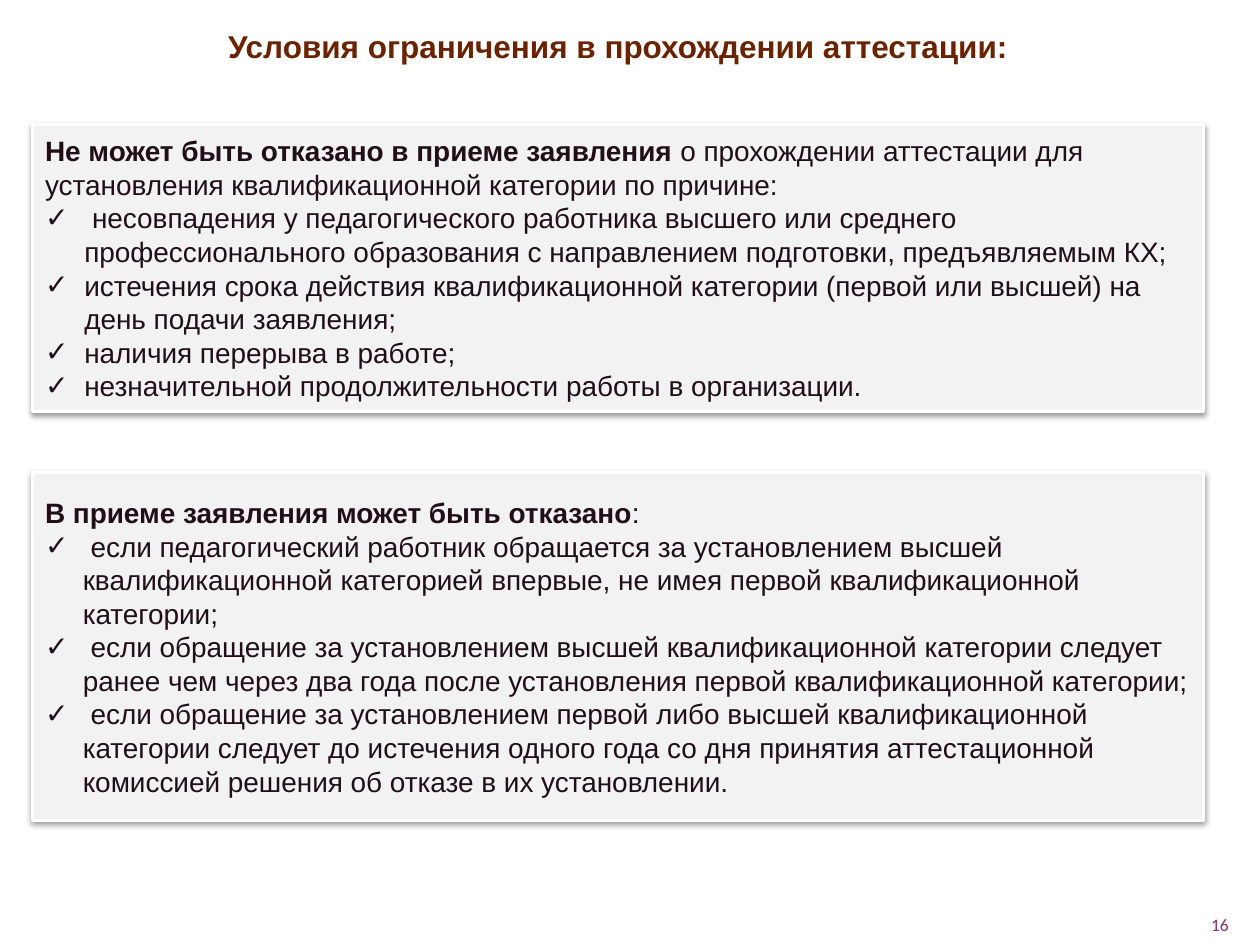
from lxml import etree
from pptx import Presentation
from pptx.dml.color import RGBColor as Rgb
from pptx.enum.shapes import MSO_SHAPE as Shape
from pptx.enum.text import MSO_ANCHOR as Anchor, MSO_AUTO_SIZE as Fit, PP_ALIGN as Align
from pptx.oxml import parse_xml
from pptx.oxml.ns import qn
from pptx.util import Cm, Pt

HUES = {"panel": "F2F2F2", "edge": "FFFFFF", "text": "210F17",
        "title": "6A2300", "number": "832F72"}
LEFT, WIDE = 0.66, 23.6
SHADE = (
    '<a:effectLst xmlns:a="http://schemas.openxmlformats.org/drawingml/2006/main">'
    '<a:outerShdw blurRad="{blur}" dist="{dist}" dir="5400000" rotWithShape="0">'
    '<a:srgbClr val="000000"><a:alpha val="38000"/></a:srgbClr>'
    '</a:outerShdw></a:effectLst>')

DENY_HEAD = [
    ("Не может быть отказано в приеме заявления ", True),
    ("о прохождении аттестации для установления квалификационной категории "
     "по причине:", False)]
DENY = [
    " несовпадения у педагогического работника высшего или среднего "
    "профессионального образования с направлением подготовки, предъявляемым КХ;",
    "истечения срока действия квалификационной категории (первой или высшей) "
    "на день подачи заявления;",
    "наличия перерыва в работе;",
    "незначительной продолжительности работы в организации."]
ALLOW_HEAD = [("В приеме заявления может быть отказано", True), (":", False)]
ALLOW = [
    " если педагогический работник обращается за установлением высшей "
    "квалификационной категорией впервые, не имея первой квалификационной категории;",
    " если обращение за установлением высшей квалификационной категории следует "
    "ранее чем через два года после установления первой квалификационной категории;",
    " если обращение за установлением первой либо высшей квалификационной "
    "категории следует до истечения одного года со дня принятия аттестационной "
    "комиссией решения об отказе в их установлении."]


def shade():
    return parse_xml(SHADE.format(blur=Pt(3.1), dist=Pt(1.6)))


def add_run(para, text, size, hue, bold=False, name="Arial"):
    run = para.add_run()
    run.text = text
    font = run.font
    font.size, font.bold, font.name = Pt(size), bold, name
    font.color.rgb = Rgb.from_string(HUES[hue])
    return run


def add_tick(para, indent):
    props = para._p.get_or_add_pPr()
    props.set("marL", str(Cm(indent)))
    props.set("indent", str(-Cm(indent)))
    etree.SubElement(props, qn("a:buFont"), typeface="Arial")
    etree.SubElement(props, qn("a:buChar"), char="✓")


def set_title(slide, left, top, width, height):
    title = slide.shapes.title
    title.left, title.top = Cm(left), Cm(top)
    title.width, title.height = Cm(width), Cm(height)
    frame = title.text_frame
    frame.auto_size, frame.vertical_anchor = Fit.NONE, Anchor.MIDDLE
    para = frame.paragraphs[0]
    para.alignment = Align.CENTER
    run = add_run(para, "Условия ограничения в прохождении аттестации:",
                  18, "title", True)
    run._r.rPr.find(qn("a:solidFill")).addnext(shade())


def add_panel(slide, left, top, width, height, head, items, indent):
    """Shadowed box with a lead sentence and a ticked list."""
    box = slide.shapes.add_shape(Shape.RECTANGLE, Cm(left), Cm(top),
                                 Cm(width), Cm(height))
    box.fill.solid()
    box.fill.fore_color.rgb = Rgb.from_string(HUES["panel"])
    box.line.color.rgb = Rgb.from_string(HUES["edge"])
    box.line.width = Pt(1.5)
    box._element.spPr.append(shade())
    frame = box.text_frame
    frame.word_wrap, frame.vertical_anchor = True, Anchor.MIDDLE
    lead = frame.paragraphs[0]
    lead.alignment = Align.LEFT
    for text, bold in head:
        add_run(lead, text, 16, "text", bold)
    for item in items:
        para = frame.add_paragraph()
        para.alignment = Align.LEFT
        add_tick(para, indent)
        add_run(para, item, 16, "text")


def add_number(slide, left, top, width, height):
    box = slide.shapes.add_textbox(Cm(left), Cm(top), Cm(width), Cm(height))
    frame = box.text_frame
    frame.word_wrap, frame.vertical_anchor = True, Anchor.BOTTOM
    frame.margin_left = frame.margin_right = 0
    frame.margin_top = frame.margin_bottom = 0
    para = frame.paragraphs[0]
    para.alignment = Align.RIGHT
    add_run(para, "16", 10, "number", name="Calibri")


def main():
    deck = Presentation()
    deck.slide_width, deck.slide_height = Cm(25.4), Cm(19.05)
    slide = deck.slides.add_slide(deck.slide_layouts[5])
    set_title(slide, LEFT, 0.33, WIDE, 1.19)
    add_panel(slide, LEFT, 2.51, WIDE, 5.79, DENY_HEAD, DENY, 0.79)
    add_panel(slide, LEFT, 9.53, WIDE, 7.01, ALLOW_HEAD, ALLOW, 0.76)
    add_number(slide, 22.66, 17.83, 2.11, 1.02)
    deck.save("out.pptx")


if __name__ == "__main__":
    main()
